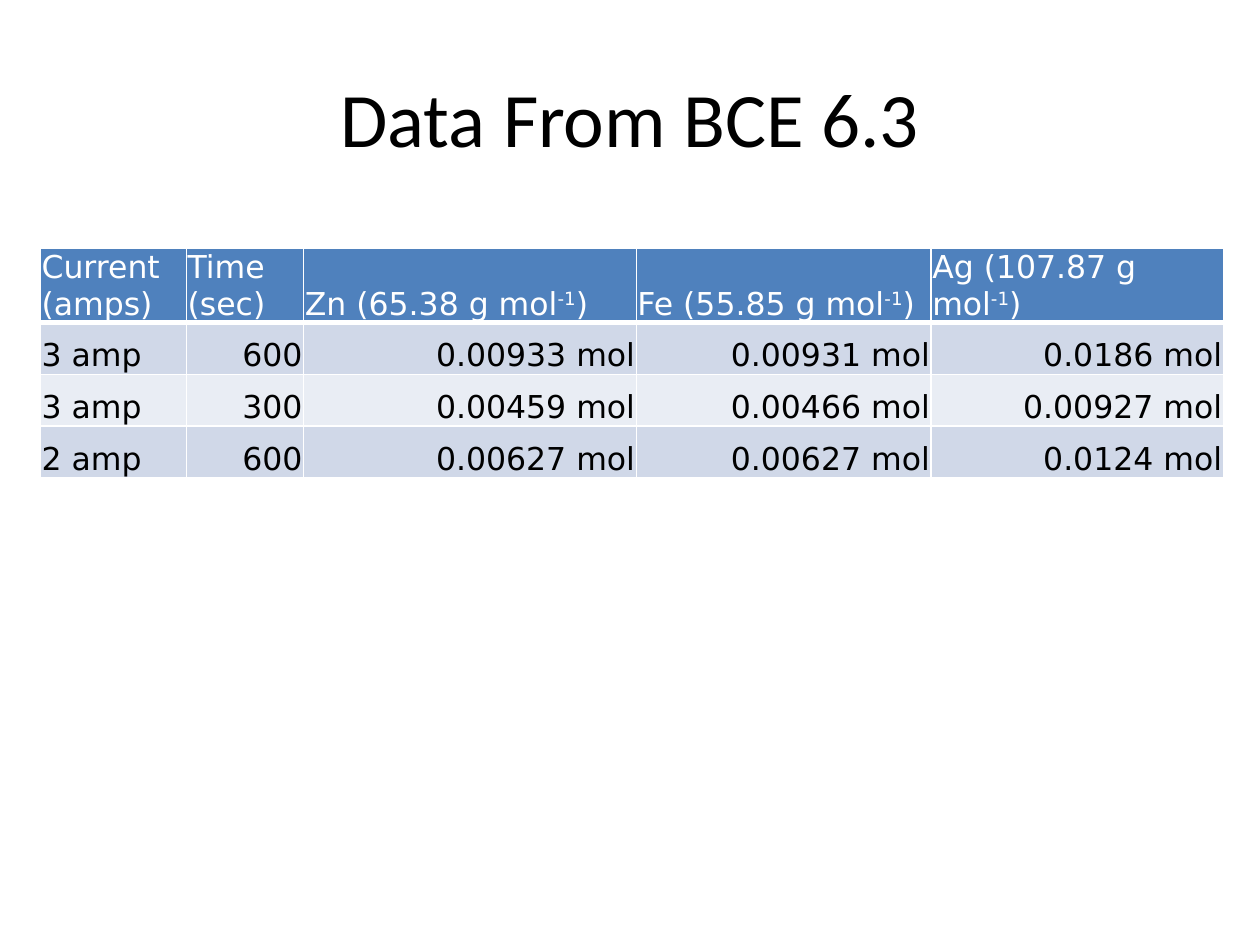
"""Build a slide with a table of electrolysis data."""
from dataclasses import dataclass

from lxml.etree import SubElement
from pptx import Presentation
from pptx.dml.color import RGBColor
from pptx.enum.text import MSO_ANCHOR, PP_ALIGN
from pptx.oxml.ns import qn
from pptx.slide import Slide
from pptx.table import _Cell
from pptx.util import Inches, Pt

COLUMN_WIDTHS = (1.16, 0.93, 2.64, 2.34, 2.32)
ROW_HEIGHT = 0.41
HEADERS = (
    ("Current (amps)",),
    ("Time (sec)",),
    ("Zn (65.38 g mol", "-1", ")"),
    ("Fe (55.85 g mol", "-1", ")"),
    ("Ag (107.87 g mol", "-1", ")"),
)
MEASUREMENTS = (
    ("3 amp", "600", "0.00933 mol", "0.00931 mol", "0.0186 mol"),
    ("3 amp", "300", "0.00459 mol", "0.00466 mol", "0.00927 mol"),
    ("2 amp", "600", "0.00627 mol", "0.00627 mol", "0.0124 mol"),
)


@dataclass
class CellStyle:
    fill: str
    text: str
    top: int = 1
    bottom: int = 1


HEADER_STYLE = CellStyle("4F81BD", "FFFFFF", bottom=3)
BODY_STYLES = (
    CellStyle("D0D8E8", "000000", top=3),
    CellStyle("E9EDF4", "000000"),
    CellStyle("D0D8E8", "000000"),
)


def color(value: str) -> RGBColor:
    return RGBColor.from_string(value)


def add_border(cell: _Cell, side: str, width: int) -> None:
    properties = cell._tc.get_or_add_tcPr()
    line = SubElement(properties, qn(f"a:ln{side}"), w=str(Pt(width)))
    fill = SubElement(line, qn("a:solidFill"))
    SubElement(fill, qn("a:srgbClr"), val="FFFFFF")


def fill_cell(cell: _Cell, parts: tuple[str, ...], style: CellStyle,
              alignment: PP_ALIGN) -> None:
    for side, width in zip("LRTB", (1, 1, style.top, style.bottom)):
        add_border(cell, side, width)
    cell.fill.solid()
    cell.fill.fore_color.rgb = color(style.fill)
    cell.vertical_anchor = MSO_ANCHOR.BOTTOM
    cell.margin_left = cell.margin_right = cell.margin_top = Inches(0.01)
    cell.margin_bottom = 0
    para = cell.text_frame.paragraphs[0]
    para.alignment = alignment
    for part in parts:
        span = para.add_run()
        span.text = part
        span.font.name = "DejaVu Sans"
        span.font.size = Pt(18)
        span.font.bold = False
        span.font.color.rgb = color(style.text)
        if part == "-1":
            span.font._element.set("baseline", "30000")


def add_title(page: Slide, text: str) -> None:
    title = page.shapes.title
    title.left, title.top = Inches(0.5), Inches(0.3)
    title.width, title.height = Inches(9), Inches(1.25)
    title.text_frame.text = text
    title.text_frame.vertical_anchor = MSO_ANCHOR.MIDDLE
    para = title.text_frame.paragraphs[0]
    para.alignment = PP_ALIGN.CENTER
    font = para.runs[0].font
    font.name = "Calibri"
    font.size = Pt(44)
    font.color.rgb = color("000000")


def add_data_table(page: Slide) -> None:
    row_count = len(MEASUREMENTS) + 1
    table = page.shapes.add_table(
        row_count, len(COLUMN_WIDTHS), Inches(0.32), Inches(1.97),
        Inches(sum(COLUMN_WIDTHS)), Inches(ROW_HEIGHT * row_count)).table
    for column, width in zip(table.columns, COLUMN_WIDTHS):
        column.width = Inches(width)
    for index, parts in enumerate(HEADERS):
        fill_cell(table.cell(0, index), parts, HEADER_STYLE, PP_ALIGN.LEFT)
    for row, (values, style) in enumerate(zip(MEASUREMENTS, BODY_STYLES), 1):
        for index, value in enumerate(values):
            alignment = PP_ALIGN.RIGHT if index else PP_ALIGN.LEFT
            fill_cell(table.cell(row, index), (value,), style, alignment)


def main() -> None:
    deck = Presentation()
    deck.slide_width, deck.slide_height = Inches(10), Inches(7.5)
    page = deck.slides.add_slide(deck.slide_layouts.get_by_name("Title Only"))
    add_title(page, "Data From BCE 6.3")
    add_data_table(page)
    deck.save("out.pptx")


if __name__ == "__main__":
    main()
